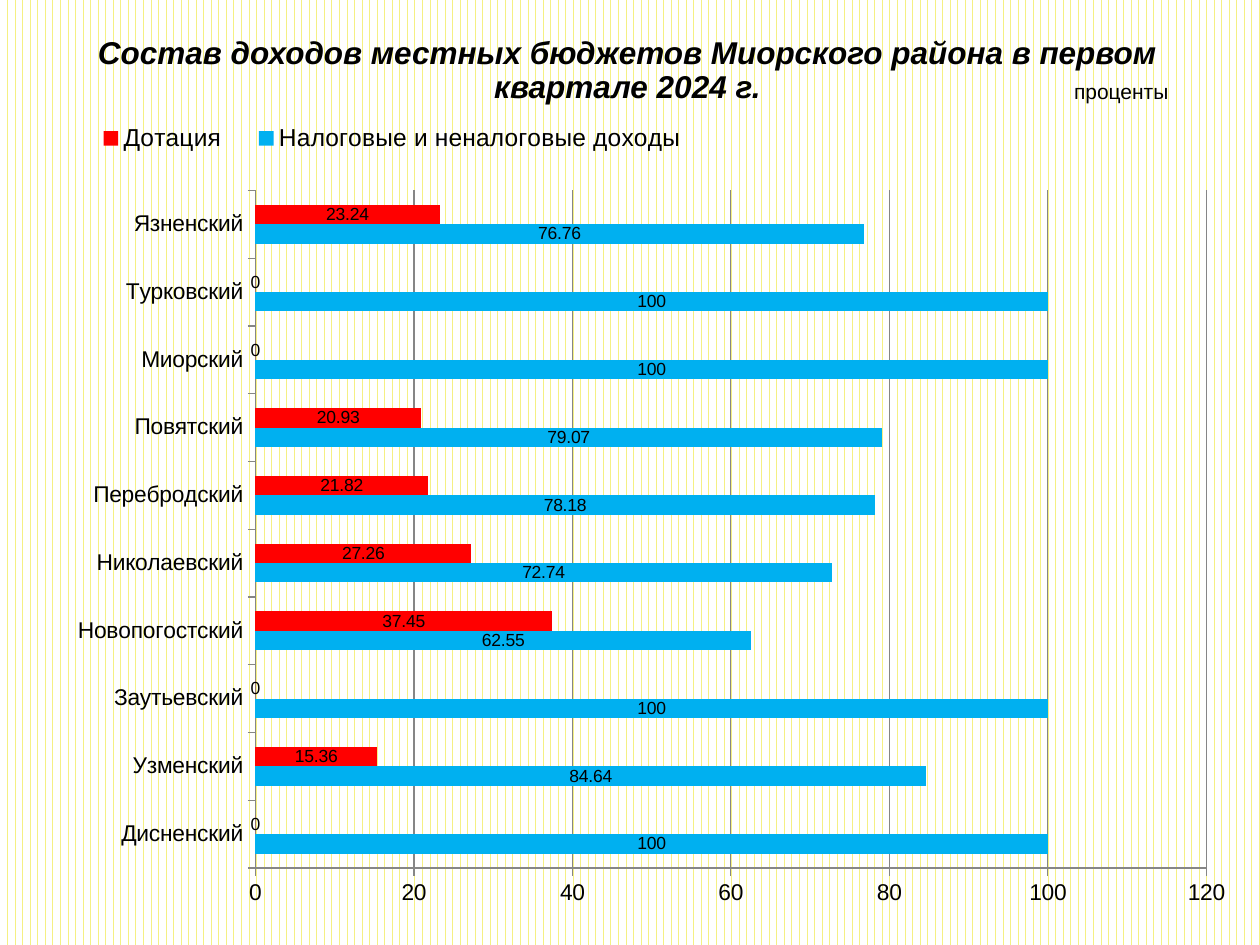
from dataclasses import dataclass

from lxml import etree
from pptx import Presentation
from pptx.chart.data import CategoryChartData
from pptx.dml.color import RGBColor
from pptx.enum.chart import XL_CHART_TYPE, XL_LABEL_POSITION, XL_LEGEND_POSITION, XL_TICK_MARK
from pptx.enum.dml import MSO_PATTERN
from pptx.enum.shapes import MSO_SHAPE
from pptx.enum.text import MSO_ANCHOR, PP_ALIGN
from pptx.oxml.ns import qn
from pptx.util import Inches, Pt

BAR_CLUSTERED = XL_CHART_TYPE.BAR_CLUSTERED
CENTER_LABEL = XL_LABEL_POSITION.CENTER
LEGEND_TOP = XL_LEGEND_POSITION.TOP
TICK_OUTSIDE = XL_TICK_MARK.OUTSIDE
DASHED_VERTICAL = MSO_PATTERN.DASHED_VERTICAL
ROUNDED = MSO_SHAPE.ROUNDED_RECTANGLE
MIDDLE = MSO_ANCHOR.MIDDLE
CENTERED = PP_ALIGN.CENTER
TITLE_ONLY = 5


@dataclass(frozen=True)
class Theme:
    font: str = "Arial"
    text: str = "000000"
    stripe: str = "F5F083"
    paper: str = "FFFFFF"
    grid: str = "868686"
    taxes: str = "00B0F0"
    grant: str = "FF0000"
    title_size: int = 18
    legend_size: int = 14
    axis_size: int = 13
    unit_size: int = 12
    label_size: int = 10


@dataclass(frozen=True)
class Box:
    """Left, top, width and height as shares of the enclosing area."""
    x: float
    y: float
    w: float
    h: float


@dataclass(frozen=True)
class Income:
    name: str
    color: str
    shares: tuple


THEME = Theme()
SLIDE_W, SLIDE_H = Inches(10), Inches(7.5)
TITLE_BOX = Box(0.067, 0.039, 0.862, 0.073)
UNIT_BOX = Box(0.823, 0.08, 0.134, 0.032)
CHART_BOX = Box(0.035, 0.112, 0.953, 0.861)
PLOT_BOX = Box(0.176, 0.104, 0.792, 0.833)
LEGEND_BOX = Box(0.025, 0.01, 0.53, 0.06)

COUNCILS = ("Дисненский", "Узменский", "Заутьевский", "Новопогостский", "Николаевский",
            "Перебродский", "Повятский", "Миорский", "Турковский", "Язненский")
INCOMES = (
    Income("Налоговые и неналоговые доходы", THEME.taxes,
           (100, 84.64, 100, 62.55, 72.74, 78.18, 79.07, 100, 100, 76.76)),
    Income("Дотация", THEME.grant,
           (0, 15.36, 0, 37.45, 27.26, 21.82, 20.93, 0, 0, 23.24)),
)


def rgb(color: str) -> RGBColor:
    return RGBColor.from_string(color)


def on_slide(box: Box) -> tuple:
    return (int(box.x * SLIDE_W), int(box.y * SLIDE_H),
            int(box.w * SLIDE_W), int(box.h * SLIDE_H))


def style_font(font, size: int) -> None:
    font.name, font.size = THEME.font, Pt(size)
    font.color.rgb = rgb(THEME.text)


def write(shape, text: str, size: int):
    """Put one centred paragraph into the shape and return it."""
    frame = shape.text_frame
    frame.text = text
    frame.word_wrap = True
    frame.vertical_anchor = MIDDLE
    paragraph = frame.paragraphs[0]
    paragraph.alignment = CENTERED
    style_font(paragraph.font, size)
    return paragraph


def set_layout(parent, box: Box, index: int, inner: bool = False) -> None:
    """Give a chart part a manual layout, as shares of the chart."""
    for old in parent.findall(qn("c:layout")):
        parent.remove(old)
    layout = etree.Element(qn("c:layout"))
    manual = etree.SubElement(layout, qn("c:manualLayout"))
    settings = [("layoutTarget", "inner")] if inner else []
    settings += [("xMode", "edge"), ("yMode", "edge")]
    settings += [(key, str(getattr(box, key))) for key in ("x", "y", "w", "h")]
    for tag, value in settings:
        etree.SubElement(manual, qn(f"c:{tag}")).set("val", value)
    parent.insert(index, layout)


def style_axis(axis, gridlines: bool) -> None:
    axis.has_major_gridlines = gridlines
    axis.major_tick_mark = TICK_OUTSIDE
    style_font(axis.tick_labels.font, THEME.axis_size)
    lines = [axis.format.line]
    if gridlines:
        lines.append(axis.major_gridlines.format.line)
    for line in lines:
        line.color.rgb = rgb(THEME.grid)
        line.width = Pt(0.75)


def add_income_chart(slide) -> None:
    data = CategoryChartData()
    data.categories = COUNCILS
    for income in INCOMES:
        data.add_series(income.name, income.shares)
    chart = slide.shapes.add_chart(BAR_CLUSTERED, *on_slide(CHART_BOX), data).chart
    chart.has_title = False
    style_font(chart.font, THEME.axis_size)

    # Bars and their values
    plot = chart.plots[0]
    plot.gap_width = 150
    plot.vary_by_categories = False
    for series, income in zip(plot.series, INCOMES):
        series.format.fill.solid()
        series.format.fill.fore_color.rgb = rgb(income.color)
        labels = series.data_labels
        labels.show_value = True
        labels.position = CENTER_LABEL
        style_font(labels.font, THEME.label_size)

    # Axes
    style_axis(chart.category_axis, gridlines=False)
    style_axis(chart.value_axis, gridlines=True)
    chart.value_axis.minimum_scale, chart.value_axis.maximum_scale = 0, 120
    chart.value_axis.major_unit = 20

    # Legend and plot area
    chart.has_legend = True
    legend = chart.legend
    legend.position = LEGEND_TOP
    legend.include_in_layout = False
    style_font(legend.font, THEME.legend_size)
    set_layout(legend._element, LEGEND_BOX, index=1)
    plot_area = chart._chartSpace.find(f".//{qn('c:plotArea')}")
    set_layout(plot_area, PLOT_BOX, index=0, inner=True)


def main() -> None:
    deck = Presentation()
    deck.slide_width, deck.slide_height = SLIDE_W, SLIDE_H
    slide = deck.slides.add_slide(deck.slide_layouts[TITLE_ONLY])

    # Striped background
    stripes = slide.background.fill
    stripes.patterned()
    stripes.pattern = DASHED_VERTICAL
    stripes.fore_color.rgb = rgb(THEME.stripe)
    stripes.back_color.rgb = rgb(THEME.paper)

    # Title
    title = slide.shapes.title
    title.left, title.top, title.width, title.height = on_slide(TITLE_BOX)
    heading = write(title, "Состав доходов местных бюджетов Миорского района "
                           "в первом квартале 2024 г.", THEME.title_size)
    heading.font.bold = heading.font.italic = True
    heading.line_spacing = 0.9

    # Unit of measure
    unit = slide.shapes.add_shape(ROUNDED, *on_slide(UNIT_BOX))
    unit.shadow.inherit = False
    unit.fill.background()
    unit.line.fill.background()
    write(unit, "проценты", THEME.unit_size)

    add_income_chart(slide)
    deck.save("out.pptx")


if __name__ == "__main__":
    main()
